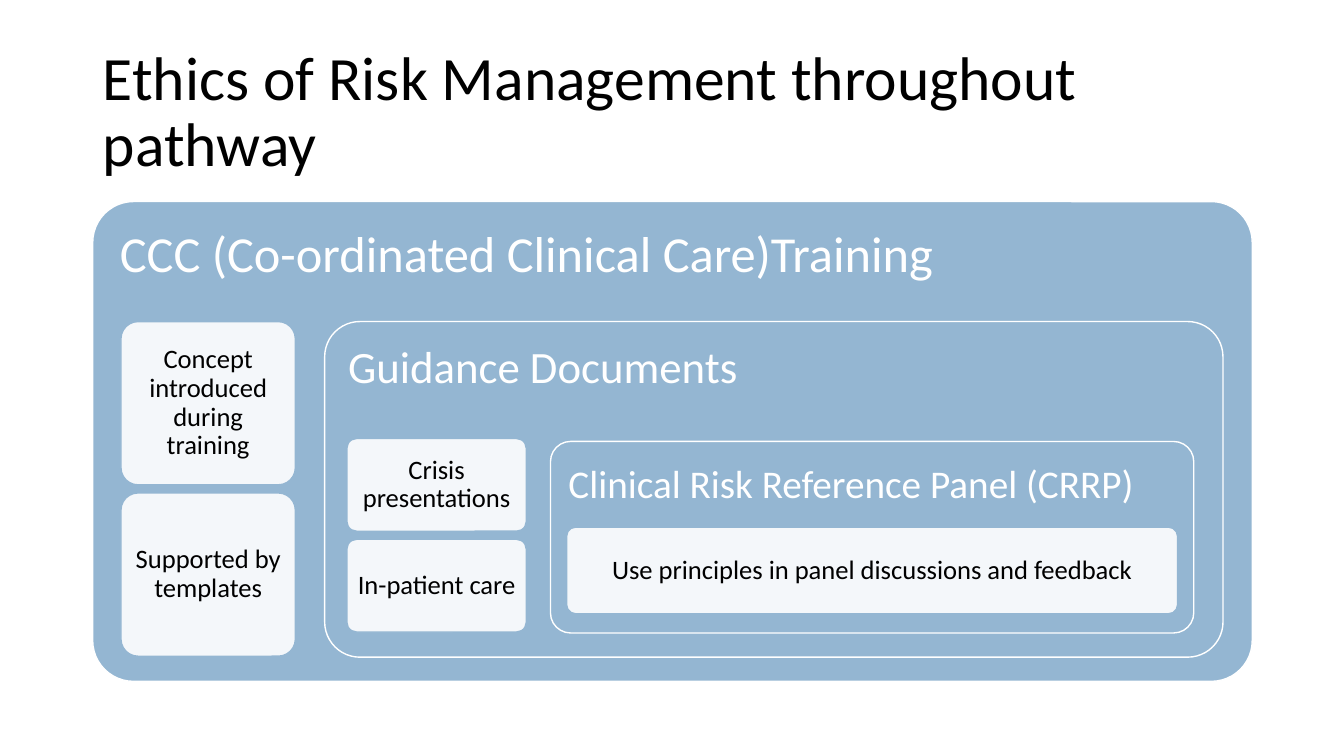
from lxml import etree
from pptx import Presentation
from pptx.dml.color import RGBColor
from pptx.enum.shapes import MSO_SHAPE
from pptx.enum.text import MSO_ANCHOR, MSO_AUTO_SIZE, PP_ALIGN
from pptx.oxml.ns import qn
from pptx.util import Inches, Pt

ROUNDED = MSO_SHAPE.ROUNDED_RECTANGLE
TOP, MIDDLE = MSO_ANCHOR.TOP, MSO_ANCHOR.MIDDLE
LEFT, CENTER = PP_ALIGN.LEFT, PP_ALIGN.CENTER

THEME = {
    "font": "Calibri",
    "black": RGBColor(0x00, 0x00, 0x00),
    "white": RGBColor(0xFF, 0xFF, 0xFF),
    "blue": RGBColor(0x94, 0xB6, 0xD2),
    "title": Pt(44),
    "levels": (Pt(36), Pt(32), Pt(28)),
    "card": Pt(19),
}


def write(sp, text, size, color, align, anchor):
    tf = sp.text_frame
    tf.text = text
    tf.word_wrap = True
    tf.auto_size = MSO_AUTO_SIZE.NONE
    tf.vertical_anchor = anchor
    p = tf.paragraphs[0]
    p.alignment = align
    p.line_spacing = 0.9
    p.font.name = THEME["font"]
    p.font.size = size
    p.font.color.rgb = color


def add_box(slide, box, radius, fill, line, inset):
    sp = slide.shapes.add_shape(ROUNDED, *map(Inches, box))
    sp.adjustments[0] = radius
    sp.shadow.inherit = False
    sp.fill.solid()
    sp.fill.fore_color.rgb = fill
    sp.line.color.rgb = line
    sp.line.width = Pt(1)
    tf = sp.text_frame
    tf.margin_left = tf.margin_right = Inches(inset)
    tf.margin_top = tf.margin_bottom = Inches(inset)
    return sp


prs = Presentation()
prs.slide_width, prs.slide_height = Inches(13.33), Inches(7.5)
slide = prs.slides.add_slide(prs.slide_layouts[5])

# Title
title = slide.shapes.title
title.left, title.top = Inches(0.92), Inches(0.4)
title.width, title.height = Inches(11.5), Inches(1.45)
write(title, "Ethics of Risk Management throughout pathway",
      THEME["title"], THEME["black"], LEFT, MIDDLE)

# Nested levels: heading, box, corner radius, inset,
# then the cards as (first card box, vertical step, texts)
levels = [
    ("CCC (Co-ordinated Clinical Care)Training",
     (0.92, 2, 11.5, 4.76), 0.085, 0.15,
     (1.2, 3.19, 1.73, 1.62), 1.7,
     ["Concept introduced during training", "Supported by templates"]),
    ("Guidance Documents",
     (3.22, 3.19, 8.91, 3.33), 0.105, 0.13,
     (3.44, 4.35, 1.78, 0.92), 1,
     ["Crisis presentations", "In-patient care"]),
    ("Clinical Risk Reference Panel (CRRP)",
     (5.46, 4.38, 6.38, 1.9), 0.105, 0.12,
     (5.62, 5.23, 6.06, 0.86), 0,
     ["Use principles in panel discussions and feedback"]),
]

for level, size in zip(levels, THEME["levels"]):
    heading, box, radius, inset, first_card, step, texts = level

    # Level panel with its heading
    panel = add_box(slide, box, radius, THEME["blue"], THEME["white"], inset)
    write(panel, heading, size, THEME["white"], LEFT, TOP)

    # Translucent white cards stacked inside the panel
    left, top, width, height = first_card
    for i, text in enumerate(texts):
        card = add_box(slide, (left, top + i * step, width, height), 0.105,
                       THEME["white"], THEME["blue"], 0.08)
        color = card.fill._xPr.find(qn("a:solidFill"))[0]
        etree.SubElement(color, qn("a:alpha"), val="90000")
        write(card, text, THEME["card"], THEME["black"], CENTER, MIDDLE)

# The innermost heading keeps single line spacing
panel.text_frame.paragraphs[0].line_spacing = 1.0

prs.save("out.pptx")
